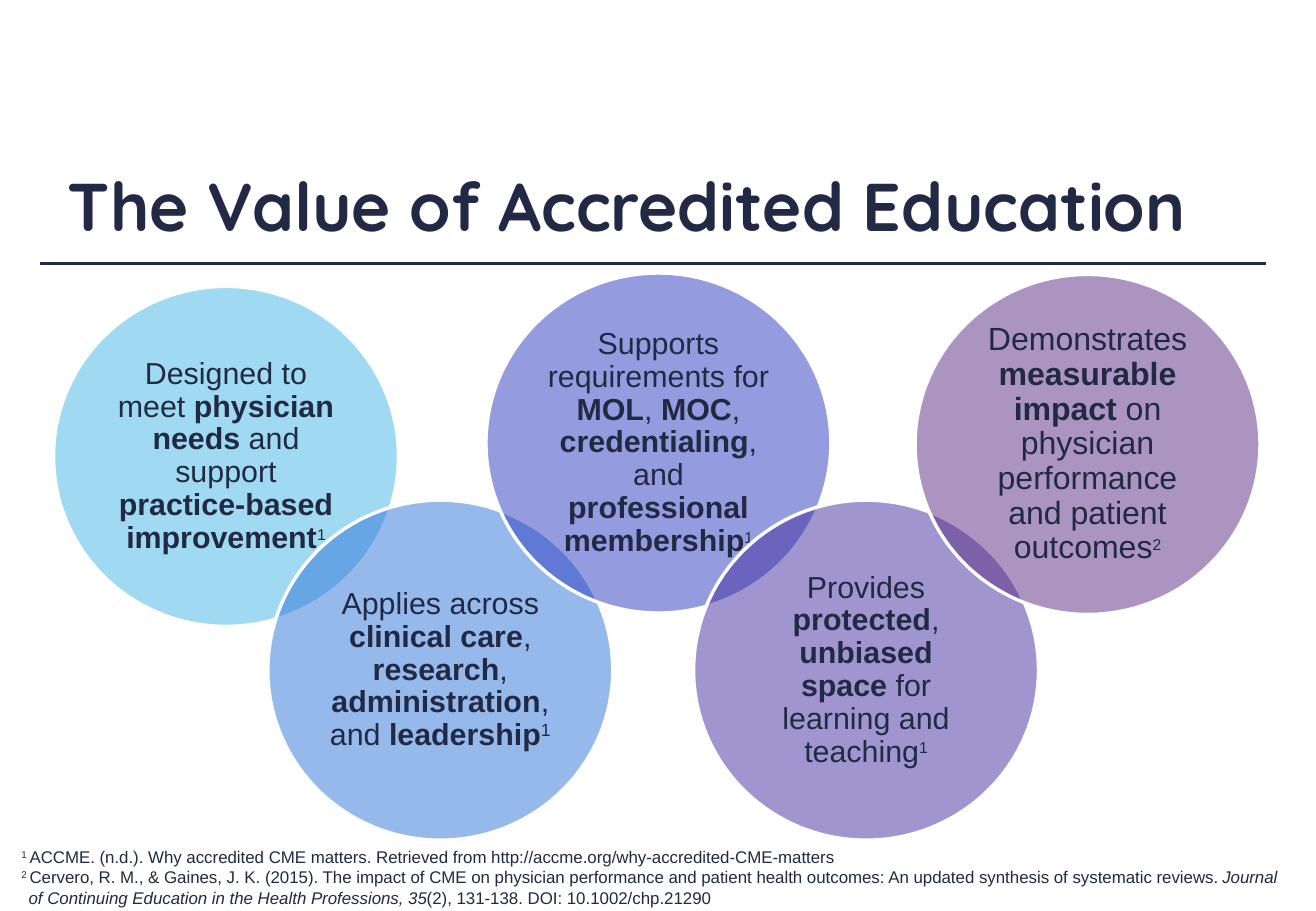
from lxml import etree
from pptx import Presentation
from pptx.dml.color import RGBColor
from pptx.enum.shapes import MSO_CONNECTOR, MSO_SHAPE
from pptx.enum.text import MSO_ANCHOR, MSO_AUTO_SIZE, PP_ALIGN
from pptx.oxml.ns import qn
from pptx.util import Cm, Pt

ELLIPSE = MSO_SHAPE.OVAL
STRAIGHT = MSO_CONNECTOR.STRAIGHT
TOP, MIDDLE = MSO_ANCHOR.TOP, MSO_ANCHOR.MIDDLE
LEFT, CENTER = PP_ALIGN.LEFT, PP_ALIGN.CENTER
NO_FIT, GROW = MSO_AUTO_SIZE.NONE, MSO_AUTO_SIZE.SHAPE_TO_FIT_TEXT

COLORS = {
    "ink": "222944",
    "white": "FFFFFF",
    "sky": "41B6E6",
    "blue": "2F74DA",
    "indigo": "2B3AC0",
    "violet": "442DA0",
    "plum": "582C83",
}
PLAIN, BOLD, ITALIC, RAISED = "plain", "bold", "italic", "raised"

CIRCLE_WIDTH, CIRCLE_HEIGHT = 7.21, 7.11
LABEL_WIDTH, LABEL_HEIGHT = 5.11, 5.03

CIRCLES = [
    {"left": 1.12, "top": 5.99, "color": "sky", "size": 18, "note_size": 16, "inset": 0.18,
     "runs": [("Designed to meet ", PLAIN), ("physician needs", BOLD), (" and support ", PLAIN),
              ("practice-based improvement", BOLD), ("1", RAISED)]},
    {"left": 5.6, "top": 10.46, "color": "blue", "size": 18, "note_size": 18, "inset": 0.18,
     "runs": [("Applies across ", PLAIN), ("clinical care", BOLD), (", ", PLAIN),
              ("research", BOLD), (", ", PLAIN), ("administration", BOLD),
              (", and ", PLAIN), ("leadership", BOLD), ("1", RAISED)]},
    {"left": 10.16, "top": 5.71, "color": "indigo", "size": 18, "note_size": 16, "inset": 0.18,
     "runs": [("Supports requirements for ", PLAIN), ("MOL", BOLD), (", ", PLAIN),
              ("MOC", BOLD), (", ", PLAIN), ("credentialing", BOLD), (", and ", PLAIN),
              ("professional membership", BOLD), ("1", RAISED)]},
    {"left": 14.5, "top": 10.46, "color": "violet", "size": 18, "note_size": 16, "inset": 0.18,
     "runs": [("Provides ", PLAIN), ("protected", BOLD), (", ", PLAIN),
              ("unbiased space ", BOLD), ("for learning and teaching", PLAIN), ("1", RAISED)]},
    {"left": 19.13, "top": 5.74, "color": "plum", "size": 19, "note_size": 16, "inset": 0.2,
     "runs": [("Demonstrates ", PLAIN), ("measurable impact", BOLD),
              (" on physician performance and patient outcomes", PLAIN), ("2", RAISED)]},
]

REFERENCES = [
    [("1 ", RAISED),
     ("ACCME. (n.d.). Why accredited CME matters. Retrieved from "
      "http://accme.org/why-accredited-CME-matters", PLAIN)],
    [("2 ", RAISED),
     ("Cervero, R. M., & Gaines, J. K. (2015). The impact of CME on physician performance and "
      "patient health outcomes: An updated synthesis of systematic reviews. ", PLAIN),
     ("Journal of Continuing Education in the Health Professions, 35", ITALIC),
     ("(2), 131-138. DOI: 10.1002/chp.21290", PLAIN)],
]


def rgb(name):
    """Return the named colour."""
    return RGBColor.from_string(COLORS[name])


def place(shape, left, top, width, height):
    """Set position and size in centimetres."""
    shape.left, shape.top = Cm(left), Cm(top)
    shape.width, shape.height = Cm(width), Cm(height)


def set_margins(frame, horizontal, vertical):
    """Set the inner margins of a text frame in centimetres."""
    frame.margin_left = frame.margin_right = Cm(horizontal)
    frame.margin_top = frame.margin_bottom = Cm(vertical)


def add_run(paragraph, text, style, size, font="Arial"):
    """Append one run in the given style."""
    run = paragraph.add_run()
    run.text = text
    run.font.name = font
    run.font.size = Pt(size)
    run.font.color.rgb = rgb("ink")
    run.font.bold = style == BOLD
    run.font.italic = style == ITALIC
    if style == RAISED:
        run._r.get_or_add_rPr().set("baseline", "30000")


def add_title(slide, text):
    """Fill and place the title placeholder."""
    title = slide.shapes.title
    place(title, 1.37, 3.4, 24.77, 2.16)
    frame = title.text_frame
    frame.auto_size = NO_FIT
    frame.vertical_anchor = TOP
    set_margins(frame, 0.05, 0.03)
    paragraph = frame.paragraphs[0]
    paragraph.alignment = LEFT
    add_run(paragraph, text, BOLD, 40, "Quicksand")


def add_rule(slide):
    """Draw the line under the title."""
    rule = slide.shapes.add_connector(STRAIGHT, Cm(0.84), Cm(5.51), Cm(26.47), Cm(5.51))
    rule.line.color.rgb = rgb("ink")
    rule.line.width = Pt(2.25)
    etree.SubElement(rule._element.spPr, qn("a:effectLst"))


def add_circle(slide, left, top, color):
    """Draw a half-transparent circle with a white outline."""
    circle = slide.shapes.add_shape(
        ELLIPSE, Cm(left), Cm(top), Cm(CIRCLE_WIDTH), Cm(CIRCLE_HEIGHT))
    circle.shadow.inherit = False
    circle.fill.solid()
    circle.fill.fore_color.rgb = rgb(color)
    fill_color = circle._element.spPr.find(qn("a:solidFill")).find(qn("a:srgbClr"))
    etree.SubElement(fill_color, qn("a:alpha")).set("val", "50000")
    circle.line.color.rgb = rgb("white")
    circle.line.width = Pt(2)


def add_label(slide, circle):
    """Centre the label of a circle inside it."""
    left = circle["left"] + (CIRCLE_WIDTH - LABEL_WIDTH) / 2
    top = circle["top"] + (CIRCLE_HEIGHT - LABEL_HEIGHT) / 2
    box = slide.shapes.add_textbox(Cm(left), Cm(top), Cm(LABEL_WIDTH), Cm(LABEL_HEIGHT))
    frame = box.text_frame
    frame.word_wrap = True
    frame.vertical_anchor = MIDDLE
    set_margins(frame, circle["inset"], circle["inset"])
    paragraph = frame.paragraphs[0]
    paragraph.alignment = CENTER
    paragraph.line_spacing = 0.9
    for text, style in circle["runs"]:
        size = circle["note_size"] if style == RAISED else circle["size"]
        add_run(paragraph, text, style, size)


def add_references(slide):
    """Add the numbered sources with a hanging indent."""
    box = slide.shapes.add_textbox(Cm(0.2), Cm(17.58), Cm(26.87), Cm(1.55))
    frame = box.text_frame
    frame.word_wrap = True
    frame.auto_size = GROW
    for index, runs in enumerate(REFERENCES):
        paragraph = frame.add_paragraph() if index else frame.paragraphs[0]
        properties = paragraph._p.get_or_add_pPr()
        properties.set("marL", str(Cm(0.15)))
        properties.set("indent", str(-Cm(0.15)))
        for text, style in runs:
            add_run(paragraph, text, style, 10)


def main():
    """Build and save the slide."""
    presentation = Presentation()
    presentation.slide_width, presentation.slide_height = Cm(27.51), Cm(19.05)
    slide = presentation.slides.add_slide(presentation.slide_layouts[5])
    add_rule(slide)
    add_title(slide, "The Value of Accredited Education")
    for circle in CIRCLES:
        add_circle(slide, circle["left"], circle["top"], circle["color"])
        add_label(slide, circle)
    add_references(slide)
    presentation.save("out.pptx")


if __name__ == "__main__":
    main()
